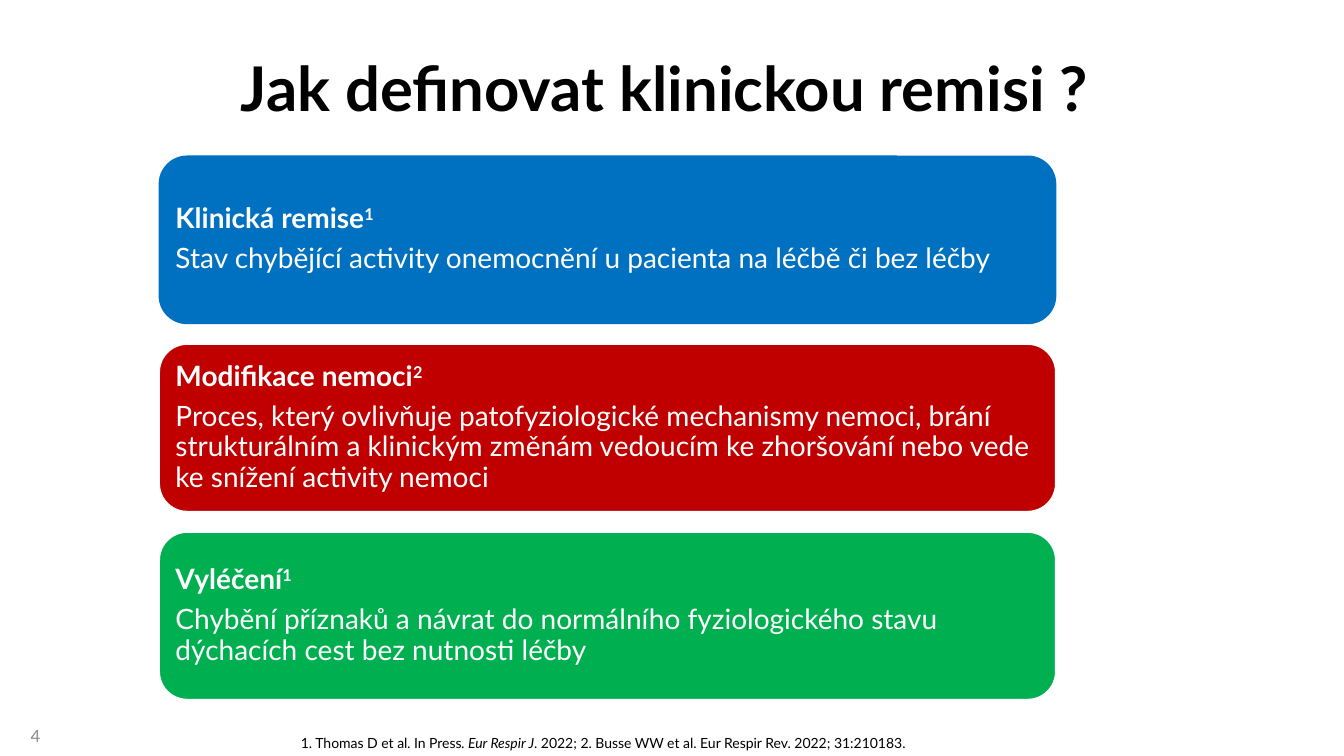
from lxml.etree import SubElement
from pptx import Presentation
from pptx.dml.color import RGBColor
from pptx.enum.shapes import MSO_SHAPE as Shape
from pptx.enum.text import MSO_ANCHOR as Anchor, MSO_AUTO_SIZE as AutoSize, PP_ALIGN as Align
from pptx.oxml.ns import qn
from pptx.util import Inches, Pt

FONT = "Lato"
COLORS = {
    "black": "000000", "white": "FFFFFF", "gray": "8C8C8C",
    "blue": "0070C0", "red": "C00000", "green": "00B050",
}
CARD_LEFT, CARD_TOP, CARD_W, CARD_H = 1.58, 1.55, 8.89, 1.66
CARD_PITCH = 1.865
CARD_INSET = 0.08

# heading, reference number, definition, fill, outline
CARDS = [
    ("Klinická remise", "1",
     "Stav chybějící activity onemocnění u pacienta na léčbě či bez léčby",
     "blue", "blue"),
    ("Modifikace nemoci", "2",
     "Proces, který ovlivňuje patofyziologické mechanismy nemoci, brání "
     "strukturálním a klinickým změnám vedoucím ke zhoršování nebo vede "
     "ke snížení activity nemoci",
     "red", "white"),
    ("Vyléčení", "1",
     "Chybění příznaků a návrat do normálního fyziologického stavu "
     "dýchacích cest bez nutnosti léčby",
     "green", "white"),
]
REFERENCES = [
    ("1. Thomas D et al", False),
    (". ", True),
    ("In Press", False),
    (". Eur Respir J", True),
    (". 2022; 2. Busse WW et al. Eur Respir Rev. 2022; 31:210183. ", False),
]


def rgb(name):
    return RGBColor.from_string(COLORS[name])


def place(sp, left, top, width, height):
    sp.left, sp.top = Inches(left), Inches(top)
    sp.width, sp.height = Inches(width), Inches(height)


def add_run(p, text, size, color, bold=False, italic=False, superscript=False):
    r = p.add_run()
    r.text = text
    r.font.name = FONT
    r.font.size = Pt(size)
    r.font.bold, r.font.italic = bold, italic
    r.font.color.rgb = rgb(color)
    if superscript:
        r._r.get_or_add_rPr().set("baseline", "30000")


def set_frame(tf, anchor):
    tf.word_wrap = True
    tf.auto_size = AutoSize.NONE
    tf.vertical_anchor = anchor


def set_paragraph(p, align, line=1.0, before=0, after=0):
    p.alignment = align
    p.line_spacing = line
    p.space_before, p.space_after = Pt(before), Pt(after)


def fill_title(sp):
    place(sp, 0.92, 0.18, 11.5, 1.45)
    set_frame(sp.text_frame, Anchor.MIDDLE)
    p = sp.text_frame.paragraphs[0]
    set_paragraph(p, Align.CENTER, line=0.9)
    add_run(p, "Jak definovat klinickou remisi ? ", 44, "black", bold=True)


def fill_references(sp):
    place(sp, 0.5, 6.4, 11, 1.1)
    set_frame(sp.text_frame, Anchor.BOTTOM)
    p = sp.text_frame.paragraphs[0]
    set_paragraph(p, Align.CENTER, line=1.1, before=3)
    pPr = p._p.get_or_add_pPr()
    pPr.set("marL", "0")
    pPr.set("indent", "0")
    SubElement(pPr, qn("a:buNone"))
    for text, italic in REFERENCES:
        add_run(p, text, 10, "black", italic=italic)


def add_card(s, row, heading, reference, definition, fill, outline):
    sp = s.shapes.add_shape(
        Shape.ROUNDED_RECTANGLE, Inches(CARD_LEFT),
        Inches(CARD_TOP + row * CARD_PITCH), Inches(CARD_W), Inches(CARD_H))
    sp.shadow.inherit = False
    sp.fill.solid()
    sp.fill.fore_color.rgb = rgb(fill)
    sp.line.color.rgb = rgb(outline)
    sp.line.width = Pt(1)
    tf = sp.text_frame
    set_frame(tf, Anchor.MIDDLE)
    tf.margin_left = tf.margin_right = Inches(CARD_INSET)
    tf.margin_top = tf.margin_bottom = Inches(CARD_INSET)
    p = tf.paragraphs[0]
    set_paragraph(p, Align.LEFT, line=0.9, after=7)
    add_run(p, heading, 20, "white", bold=True)
    add_run(p, reference, 20, "white", bold=True, superscript=True)
    p = tf.add_paragraph()
    set_paragraph(p, Align.LEFT, line=0.9, after=7)
    add_run(p, definition, 20, "white")


def add_page_number(s, number):
    sp = s.shapes.add_textbox(Inches(0), Inches(7.1), Inches(0.5), Inches(0.4))
    set_frame(sp.text_frame, Anchor.MIDDLE)
    p = sp.text_frame.paragraphs[0]
    set_paragraph(p, Align.RIGHT)
    add_run(p, number, 12, "gray")


def main():
    prs = Presentation()
    prs.slide_width, prs.slide_height = Inches(13.33), Inches(7.5)
    s = prs.slides.add_slide(prs.slide_layouts[1])
    fill_title(s.shapes.title)
    fill_references(s.placeholders[1])
    for row, card in enumerate(CARDS):
        add_card(s, row, *card)
    add_page_number(s, "4")
    prs.save("out.pptx")


if __name__ == "__main__":
    main()
